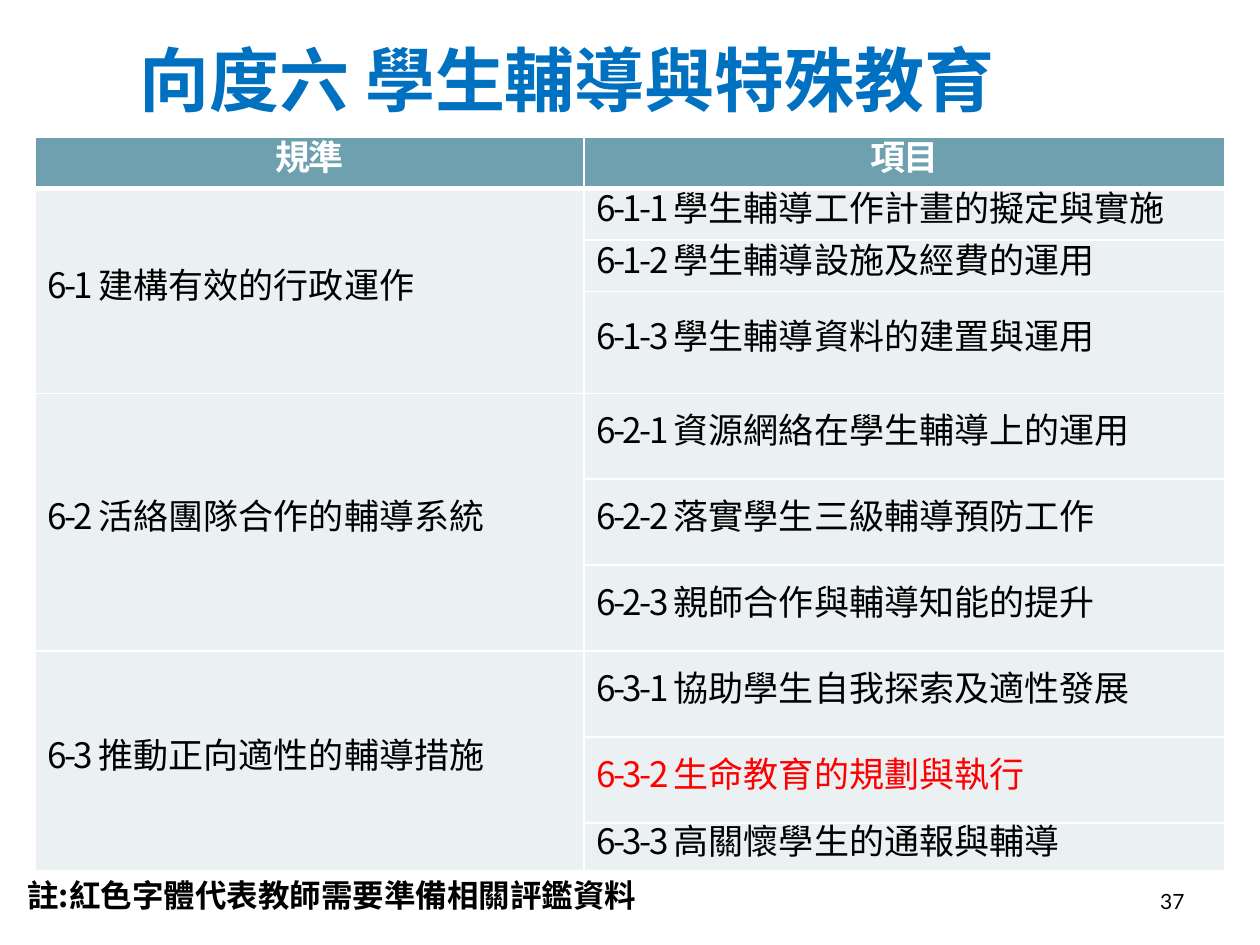
from lxml.etree import SubElement
from pptx import Presentation
from pptx.dml.color import RGBColor
from pptx.enum.text import MSO_ANCHOR, PP_ALIGN
from pptx.oxml.ns import qn
from pptx.util import Pt

COLORS = {"title": "0070C0", "header": "6EA0B0", "body": "EBF0F2",
          "white": "FFFFFF", "black": "000000", "red": "FF0000"}
CJK = "Noto Sans CJK SC"
TITLE = {"size": Pt(40), "bold": True, "name": "Times New Roman"}
HEADER = {"size": Pt(20), "bold": True, "name": CJK}
BODY = {"size": Pt(20), "bold": False, "name": CJK}
NOTE = {"size": Pt(18), "bold": True, "name": CJK}
NUMBER = {"size": Pt(12), "bold": False, "name": "Lato"}
TIGHT = -150

STANDARDS = [
    (("6-1 ", "建構有效的行政運作"),
     ["學生輔導工作計畫的擬定與實施", "學生輔導設施及經費的運用", "學生輔導資料的建置與運用"]),
    (("6-2 活", "絡團隊合作的輔導系統"),
     ["資源網絡在學生輔導上的運用", "落實學生三級輔導預防工作", "親師合作與輔導知能的提升"]),
    (("6-3 ", "推動正向適性的輔導措施"),
     ["協助學生自我探索及適性發展", "生命教育的規劃與執行", "高關懷學生的通報與輔導"]),
]
EVIDENCE_ITEM = "6-3-2 "
COLUMN_WIDTHS = [313.6, 366.5]
ROW_HEIGHTS = [29.3] * 3 + [58.3] + [49.1] * 5 + [26]


def add_run(p, text, style, color, spacing=0):
    r = p.add_run()
    r.text = text
    for name, value in style.items():
        setattr(r.font, name, value)
    r.font.color.rgb = RGBColor.from_string(COLORS[color])
    rPr = r._r.get_or_add_rPr()
    rPr.set("spc", str(spacing))
    latin = rPr.find(qn("a:latin"))
    ea = rPr.makeelement(qn("a:ea"), {"typeface": CJK})
    latin.addnext(ea)


def add_text(s, box, text, style, color, align, anchor):
    tf = s.shapes.add_textbox(*map(Pt, box)).text_frame
    tf.word_wrap = True
    tf.vertical_anchor = anchor
    p = tf.paragraphs[0]
    p.alignment = align
    add_run(p, text, style, color)


def format_cell(cell, fill, bottom=1):
    tcPr = cell._tc.get_or_add_tcPr()
    for side, width in {"L": 1, "R": 1, "T": 1, "B": bottom}.items():
        ln = SubElement(tcPr, qn(f"a:ln{side}"), w=str(Pt(width)))
        line_fill = SubElement(ln, qn("a:solidFill"))
        SubElement(line_fill, qn("a:srgbClr"), val=COLORS["white"])
    cell.fill.solid()
    cell.fill.fore_color.rgb = RGBColor.from_string(COLORS[fill])
    cell.vertical_anchor = MSO_ANCHOR.MIDDLE


def fill_cell(cell, runs, style, color, align, hanging=0):
    p = cell.text_frame.paragraphs[0]
    p.alignment = align
    p.line_spacing = Pt(20)
    if hanging:
        pPr = p._p.get_or_add_pPr()
        pPr.set("marL", str(Pt(hanging)))
        pPr.set("indent", str(Pt(-hanging)))
    for text, spacing in runs:
        add_run(p, text, style, color, spacing)


def add_standards_table(s):
    frame = s.shapes.add_table(len(ROW_HEIGHTS), 2, Pt(20), Pt(78.6),
                               Pt(sum(COLUMN_WIDTHS)), Pt(sum(ROW_HEIGHTS)))
    table = frame.table
    for column, width in zip(table.columns, COLUMN_WIDTHS):
        column.width = Pt(width)
    for row, height in zip(table.rows, ROW_HEIGHTS):
        row.height = Pt(height)

    for i, row in enumerate(table.rows):
        for cell in row.cells:
            format_cell(cell, "body" if i else "header", 1 if i else 3)
    for cell, heading in zip(table.rows[0].cells, ["規準", "項目"]):
        fill_cell(cell, [(heading, TIGHT)], HEADER, "white", PP_ALIGN.CENTER)

    row = 1
    for group, ((lead, rest), items) in enumerate(STANDARDS, 1):
        standard = table.cell(row, 0)
        standard.merge(table.cell(row + len(items) - 1, 0))
        fill_cell(standard, [(lead, TIGHT), (rest, 0)], BODY, "black", PP_ALIGN.JUSTIFY)
        for n, item in enumerate(items, 1):
            number = f"6-{group}-{n} "
            color = "red" if number == EVIDENCE_ITEM else "black"
            fill_cell(table.cell(row, 1), [(number, TIGHT), (item, 0)],
                      BODY, color, PP_ALIGN.JUSTIFY, 35.3)
            row += 1


def main():
    prs = Presentation()
    prs.slide_width, prs.slide_height = Pt(720), Pt(540)
    s = prs.slides.add_slide(prs.slide_layouts[6])
    add_text(s, (0, 0, 648, 90), "向度六 學生輔導與特殊教育", TITLE, "title",
             PP_ALIGN.CENTER, MSO_ANCHOR.MIDDLE)
    add_standards_table(s)
    add_text(s, (8.6, 496.8, 646.6, 28.8), "註:紅色字體代表教師需要準備相關評鑑資料",
             NOTE, "black", PP_ALIGN.LEFT, MSO_ANCHOR.TOP)
    add_text(s, (516.2, 500.4, 167.8, 28.8), "37", NUMBER, "black",
             PP_ALIGN.RIGHT, MSO_ANCHOR.MIDDLE)
    prs.save("out.pptx")


if __name__ == "__main__":
    main()
